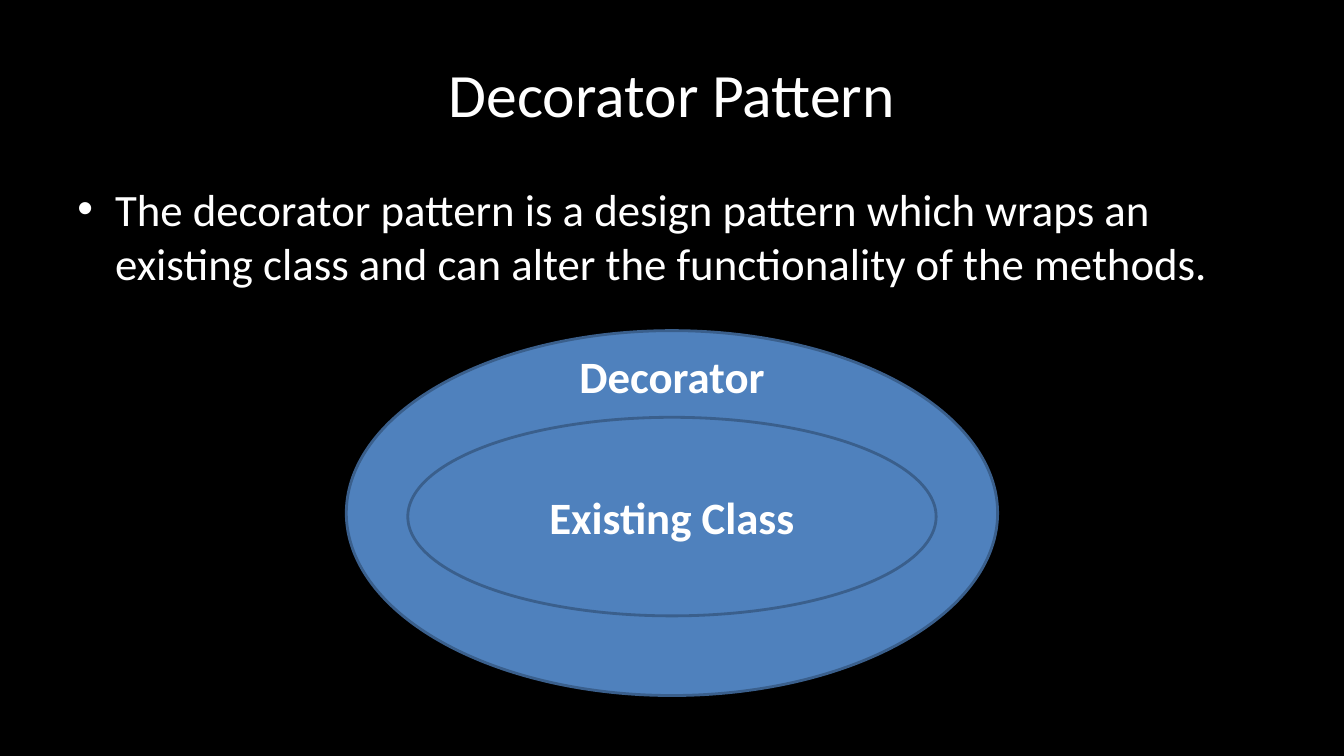
from pptx import Presentation
from pptx.dml.color import RGBColor
from pptx.enum.shapes import MSO_SHAPE
from pptx.enum.text import MSO_ANCHOR, PP_ALIGN
from pptx.util import Inches, Pt

BLACK = RGBColor(0x00, 0x00, 0x00)
WHITE = RGBColor(0xFF, 0xFF, 0xFF)
BLUE = RGBColor(0x4F, 0x81, 0xBD)
EDGE = RGBColor(0x3A, 0x5F, 0x8C)
DONUT, OVAL = MSO_SHAPE.DONUT, MSO_SHAPE.OVAL
MIDDLE, TOP = MSO_ANCHOR.MIDDLE, MSO_ANCHOR.TOP
CENTER, LEFT = PP_ALIGN.CENTER, PP_ALIGN.LEFT

WIDTH, HEIGHT = 13.33, 7.5
MARGIN = WIDTH / 20


def centred(top, width, height):
    """Box centred across the slide, in EMU."""
    return [Inches(n) for n in ((WIDTH - width) / 2, top, width, height)]


def write(holder, text, size, anchor=MIDDLE, align=CENTER, bold=False):
    frame = holder.text_frame
    frame.word_wrap = True
    frame.vertical_anchor = anchor
    frame.text = text
    paragraph = frame.paragraphs[0]
    paragraph.alignment = align
    font_format = {"name": "Calibri", "size": Pt(size), "bold": bold}
    for attribute, value in font_format.items():
        setattr(paragraph.runs[0].font, attribute, value)
    paragraph.runs[0].font.color.rgb = WHITE


deck = Presentation()
deck.slide_width, deck.slide_height = Inches(WIDTH), Inches(HEIGHT)
slide = deck.slides.add_slide(deck.slide_layouts[1])
slide.background.fill.solid()
slide.background.fill.fore_color.rgb = BLACK

# Title and definition
title, definition = slide.placeholders
for holder, top, height in ((title, 0.3, 1.25), (definition, 1.75, 4.95)):
    box = centred(top, WIDTH - 2 * MARGIN, height)
    holder.left, holder.top, holder.width, holder.height = box
write(title, "Decorator Pattern", 44)
write(definition,
      "The decorator pattern is a design pattern which wraps an existing class "
      "and can alter the functionality of the methods.", 32, TOP, LEFT)

# Decorator ring wrapped around the existing class
rings = []
for kind, top, width, height in ((DONUT, 3.28, 6.46, 3.62),
                                 (OVAL, 4.14, 5.24, 1.97)):
    ring = slide.shapes.add_shape(kind, *centred(top, width, height))
    ring.shadow.inherit = False
    ring.fill.solid()
    ring.fill.fore_color.rgb = BLUE
    ring.line.color.rgb = EDGE
    ring.line.width = Pt(2)
    rings.append(ring)
decorator, existing_class = rings
write(existing_class, "Existing Class", 32, bold=True)

# Decorator label in the upper band of the ring
decorator_label = slide.shapes.add_textbox(*centred(3.43, 3, 0.6))
write(decorator_label, "Decorator", 32, bold=True)

deck.save("out.pptx")
